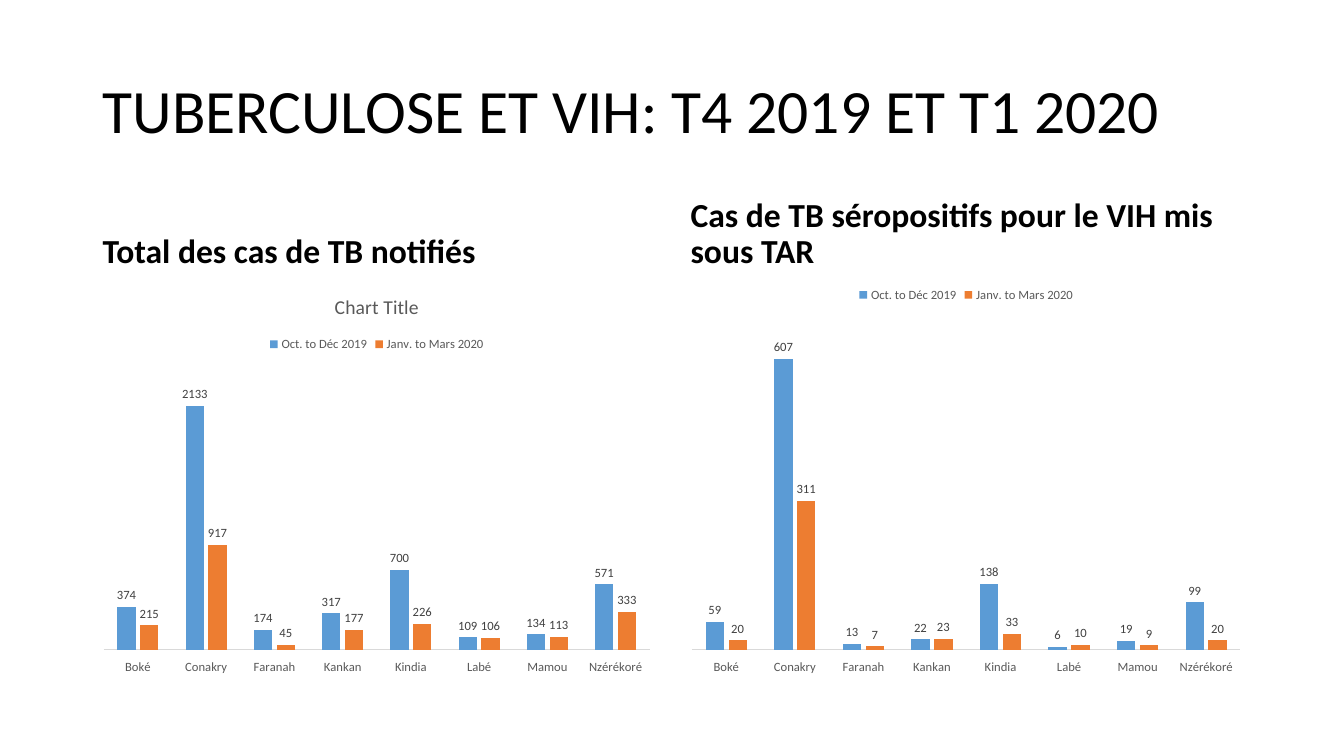
from pptx import Presentation
from pptx.chart.data import CategoryChartData as ChartData
from pptx.dml.color import RGBColor as Rgb
from pptx.enum.chart import XL_CHART_TYPE as Kind, XL_LABEL_POSITION as Spot
from pptx.enum.chart import XL_LEGEND_POSITION as Side, XL_TICK_LABEL_POSITION as Place
from pptx.enum.chart import XL_TICK_MARK as Tick
from pptx.enum.text import MSO_ANCHOR as Anchor, MSO_AUTO_SIZE as Fit, PP_ALIGN as Align
from pptx.util import Cm, Pt

HUES = {"ink": "000000", "grey": "595959", "label": "404040", "line": "D9D9D9",
        "blue": "5B9BD5", "orange": "ED7D31"}
TOWNS = ["Boké", "Conakry", "Faranah", "Kankan", "Kindia", "Labé", "Mamou", "Nzérékoré"]
TERMS = [("Oct. to Déc 2019", "blue"), ("Janv. to Mars 2020", "orange")]
PANELS = [
    {"head": "Total des cas de TB notifiés", "slot": 1, "left": 2.33, "width": 14.33,
     "title": "Chart Title", "top": 2500,
     "rows": [[374, 2133, 174, 317, 700, 109, 134, 571],
              [215, 917, 45, 177, 226, 106, 113, 333]]},
    {"head": "Cas de TB séropositifs pour le VIH mis sous TAR", "slot": 3,
     "left": 17.15, "width": 14.4, "title": None, "top": 700,
     "rows": [[59, 607, 13, 22, 138, 6, 19, 99],
              [20, 311, 7, 23, 33, 10, 9, 20]]},
]


def apply(item, values):
    for name, value in values.items():
        setattr(item, name, value)


class Deck:
    face = "Calibri"

    def __init__(self):
        self.show = Presentation()
        apply(self.show, {"slide_width": Cm(33.87), "slide_height": Cm(19.05)})
        self.slide = self.show.slides.add_slide(self.show.slide_layouts[4])

    def hue(self, name):
        return Rgb.from_string(HUES[name])

    def font(self, font, size, hue, bold=False):
        apply(font, {"name": self.face, "size": Pt(size), "bold": bold})
        font.color.rgb = self.hue(hue)

    def text(self, slot, words, box, size, anchor, bold=False, before=0):
        shape = next(s for s in self.slide.placeholders if s.placeholder_format.idx == slot)
        apply(shape, dict(zip(("left", "top", "width", "height"), map(Cm, box))))
        frame = shape.text_frame
        frame.text = words
        apply(frame, {"word_wrap": True, "auto_size": Fit.NONE, "vertical_anchor": anchor})
        para = frame.paragraphs[0]
        apply(para, {"alignment": Align.LEFT, "line_spacing": 0.9, "space_before": Pt(before)})
        self.font(para.runs[0].font, size, "ink", bold)

    def chart(self, box, rows, top, title):
        data = ChartData()
        data.categories = TOWNS
        for (name, _), row in zip(TERMS, rows):
            data.add_series(name, row)
        chart = self.slide.shapes.add_chart(Kind.COLUMN_CLUSTERED, *map(Cm, box), data).chart
        self.font(chart.font, 10, "ink")
        apply(chart, {"has_title": bool(title), "has_legend": True})
        if title:
            frame = chart.chart_title.text_frame
            frame.text = title
            self.font(frame.paragraphs[0].runs[0].font, 14, "grey")
        apply(chart.legend, {"position": Side.TOP, "include_in_layout": False})
        self.font(chart.legend.font, 9, "grey")
        self.axes(chart, top)
        plot = chart.plots[0]
        apply(plot, {"gap_width": 150, "overlap": -25, "vary_by_categories": False})
        for bars, (_, hue) in zip(plot.series, TERMS):
            bars.invert_if_negative = False
            bars.format.fill.solid()
            bars.format.fill.fore_color.rgb = self.hue(hue)
            apply(bars.data_labels, {"show_value": True, "position": Spot.OUTSIDE_END})
            self.font(bars.data_labels.font, 9, "label")

    def axes(self, chart, top):
        apply(chart.value_axis, {"visible": False, "has_major_gridlines": False,
                                 "minimum_scale": 0, "maximum_scale": top})
        axis = chart.category_axis
        apply(axis, {"major_tick_mark": Tick.NONE, "minor_tick_mark": Tick.NONE,
                     "tick_label_position": Place.LOW})
        self.font(axis.tick_labels.font, 9, "grey")
        axis.format.line.width = Pt(0.75)
        axis.format.line.color.rgb = self.hue("line")

    def save(self):
        for shape in list(self.slide.placeholders):
            if not shape.text_frame.text:
                shape.element.getparent().remove(shape.element)
        self.show.save("out.pptx")


def main():
    deck = Deck()
    deck.text(0, "TUBERCULOSE ET VIH: T4 2019 ET T1 2020", (2.33, 1.01, 29.21, 3.68),
              44, Anchor.MIDDLE)
    for panel in PANELS:
        left, width = panel["left"], panel["width"]
        deck.text(panel["slot"], panel["head"], (left, 4.67, width, 2.29),
                  24, Anchor.BOTTOM, True, 10)
        deck.chart((left, 6.96, width, 10.24), panel["rows"], panel["top"], panel["title"])
    deck.save()


if __name__ == "__main__":
    main()
